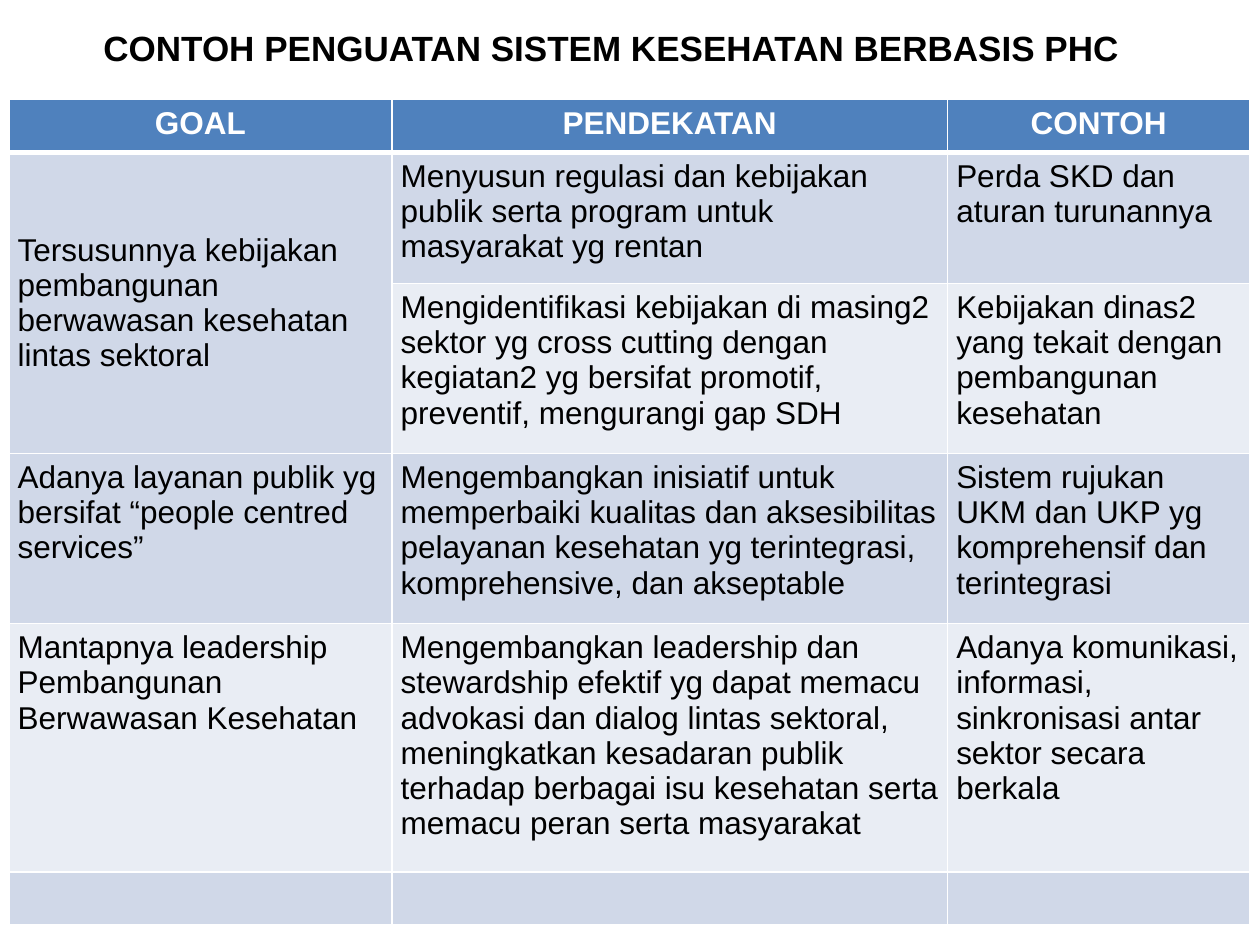
"""Build a slide with a table of primary health care strengthening examples."""
from lxml import etree
from pptx import Presentation
from pptx import util as u
from pptx.dml.color import RGBColor
from pptx.enum import text
from pptx.oxml import ns

BLACK = RGBColor(0x00, 0x00, 0x00)
WHITE = RGBColor(0xFF, 0xFF, 0xFF)
BLUE = RGBColor(0x4F, 0x81, 0xBD)
BANDS = (RGBColor(0xE9, 0xED, 0xF4), RGBColor(0xD0, 0xD8, 0xE8))

TITLE = "CONTOH PENGUATAN SISTEM KESEHATAN BERBASIS PHC"
COLUMNS = (3.04, 4.41, 2.4)
ROWS = (
    (0.42, ("GOAL", "PENDEKATAN", "CONTOH")),
    (1.04, ("Tersusunnya kebijakan pembangunan berwawasan kesehatan lintas sektoral",
            "Menyusun regulasi dan kebijakan publik serta program untuk masyarakat yg rentan",
            "Perda SKD dan aturan turunannya")),
    (1.35, ("",
            "Mengidentifikasi kebijakan di masing2 sektor yg cross cutting dengan "
            "kegiatan2 yg bersifat promotif, preventif, mengurangi gap SDH",
            "Kebijakan dinas2 yang tekait dengan pembangunan kesehatan")),
    (1.35, ("Adanya layanan publik yg bersifat “people centred services”",
            "Mengembangkan inisiatif untuk memperbaiki kualitas dan aksesibilitas "
            "pelayanan kesehatan yg terintegrasi, komprehensive, dan akseptable",
            "Sistem rujukan UKM dan UKP yg komprehensif dan terintegrasi")),
    (1.97, ("Mantapnya leadership Pembangunan Berwawasan Kesehatan",
            "Mengembangkan leadership dan stewardship efektif yg dapat memacu advokasi "
            "dan dialog lintas sektoral, meningkatkan kesadaran publik terhadap berbagai "
            "isu kesehatan serta memacu peran serta masyarakat",
            "Adanya komunikasi, informasi, sinkronisasi antar sektor secara berkala")),
    (0.42, ("", "", "")),
)


def apply(target, formats):
    """Set every attribute named in formats on the target."""
    for name, value in formats.items():
        setattr(target, name, value)


def write(paragraph, words, size, color, bold, alignment):
    """Fill a paragraph with words in the slide's typeface."""
    paragraph.text = words
    paragraph.alignment = alignment
    apply(paragraph.font, {"name": "Arial", "size": u.Pt(size), "bold": bold})
    paragraph.font.color.rgb = color
    for run in paragraph.runs:
        apply(run.font, {"name": "Arial", "size": u.Pt(size), "bold": bold})
        run.font.color.rgb = color


def draw_borders(cell, widths):
    """Give the cell white borders, with widths in points by side."""
    properties = cell._tc.get_or_add_tcPr()
    for position, (side, width) in enumerate(widths.items()):
        line = etree.Element(ns.qn(f"a:ln{side}"), w=str(u.Pt(width)))
        fill = etree.SubElement(line, ns.qn("a:solidFill"))
        etree.SubElement(fill, ns.qn("a:srgbClr"), val=str(WHITE))
        properties.insert(position, line)


def format_cell(cell, row, words):
    """Write and style one table cell according to its row."""
    header = row == 0
    apply(cell, {"margin_left": u.Inches(0.07), "margin_right": u.Inches(0.07),
                 "margin_top": u.Inches(0.05), "margin_bottom": u.Inches(0.05)})
    cell.fill.solid()
    cell.fill.fore_color.rgb = BLUE if header else BANDS[row % 2]
    alignment = text.PP_ALIGN.CENTER if header else text.PP_ALIGN.LEFT
    write(cell.text_frame.paragraphs[0], words, 18,
          WHITE if header else BLACK, header, alignment)
    draw_borders(cell, {"L": 1, "R": 1, "T": 3 if row == 1 else 1,
                        "B": 3 if header else 1})


def add_title(slide):
    """Place and format the slide title."""
    title = slide.shapes.title
    apply(title, {"left": u.Inches(0.72), "top": u.Inches(0.16),
                  "width": u.Inches(8.33), "height": u.Inches(0.44)})
    frame = title.text_frame
    apply(frame, {"word_wrap": True, "auto_size": text.MSO_AUTO_SIZE.NONE,
                  "vertical_anchor": text.MSO_ANCHOR.TOP})
    write(frame.paragraphs[0], TITLE, 20, BLACK, True, text.PP_ALIGN.LEFT)


def add_goals_table(slide):
    """Add the table of goals, approaches and examples."""
    height = sum(row_height for row_height, _ in ROWS)
    goals = slide.shapes.add_table(
        len(ROWS), len(COLUMNS), u.Inches(0.07), u.Inches(0.79),
        u.Inches(sum(COLUMNS)), u.Inches(height)).table
    for column, width in zip(goals.columns, COLUMNS):
        column.width = u.Inches(width)
    for row, (row_height, entries) in enumerate(ROWS):
        goals.rows[row].height = u.Inches(row_height)
        for column, words in enumerate(entries):
            format_cell(goals.cell(row, column), row, words)
    policy_goal = goals.cell(1, 0)
    policy_goal.merge(goals.cell(2, 0))
    policy_goal.vertical_anchor = text.MSO_ANCHOR.MIDDLE


def main():
    """Build and save the slide."""
    deck = Presentation()
    apply(deck, {"slide_width": u.Inches(10), "slide_height": u.Inches(7.5)})
    slide = deck.slides.add_slide(deck.slide_layouts.get_by_name("Title Only"))
    add_goals_table(slide)
    add_title(slide)
    deck.save("out.pptx")


if __name__ == "__main__":
    main()
